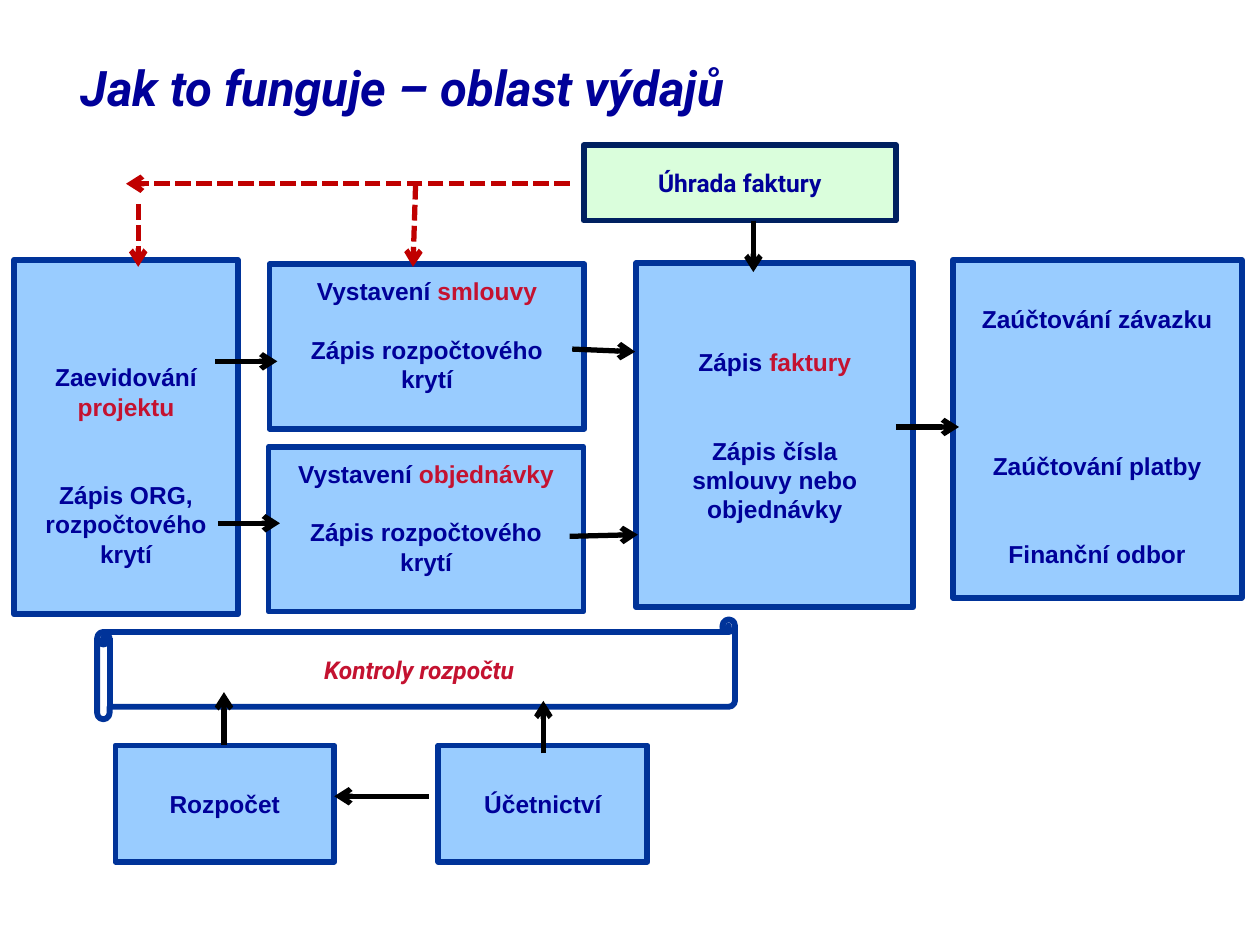
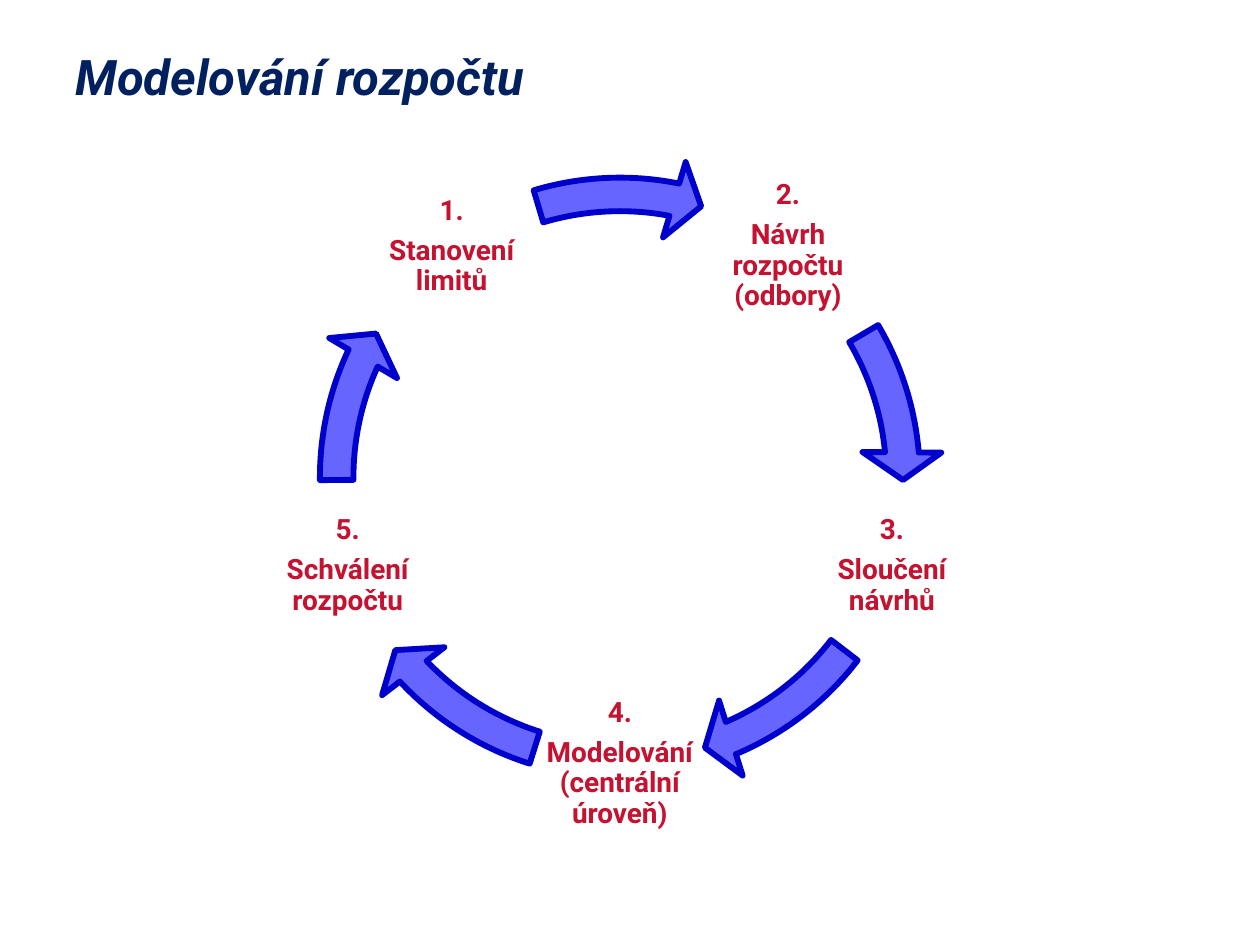
import math

import pptx
import pptx.dml.color
import pptx.enum.dml
import pptx.enum.shapes
import pptx.enum.text
import pptx.util
from lxml import etree

Pt = pptx.util.Pt
SHAPE = pptx.enum.shapes.MSO_SHAPE
ANCHOR = pptx.enum.text.MSO_ANCHOR
ALIGN = pptx.enum.text.PP_ALIGN
A = "{http://schemas.openxmlformats.org/drawingml/2006/main}"

BLUE, NAVY, RED = "000099", "002060", "C41230"
BOX_FILL, BOX_LINE = "99CCFF", "003399"
LINE_PITCH = 16.8


def rgb(value):
    return pptx.dml.color.RGBColor.from_string(value)


def write(tf, text, size=14, font="Arial", color=BLUE, italic=False,
          align=ALIGN.CENTER, anchor=ANCHOR.MIDDLE, inset=None,
          gaps=(), spacing=None, after=None):
    """Fill tf with bold lines; *starred* words are red, gaps are spaces before lines."""
    tf.word_wrap = True
    tf.auto_size = pptx.enum.text.MSO_AUTO_SIZE.NONE
    tf.vertical_anchor = anchor
    if inset is not None:
        tf.margin_left = tf.margin_right = tf.margin_top = tf.margin_bottom = Pt(inset)
    for i, line in enumerate(text.split("\n")):
        p = tf.paragraphs[0] if i == 0 else tf.add_paragraph()
        p.alignment = align
        if i and gaps:
            p.space_before = Pt(gaps[i - 1])
        if spacing:
            p.line_spacing = spacing
        if after:
            p.space_after = Pt(after)
        for j, part in enumerate(line.split("*")):
            if not part:
                continue
            r = p.add_run()
            r.text = part
            r.font.name, r.font.size = font, Pt(size)
            r.font.bold, r.font.italic = True, italic
            r.font.color.rgb = rgb(RED if j % 2 else color)


class Deck:
    def __init__(self):
        self.prs = pptx.Presentation()
        self.prs.slide_width, self.prs.slide_height = Pt(720), Pt(540)
        self.s = None

    def slide(self, title, x, y, w, h, color):
        self.s = self.prs.slides.add_slide(self.prs.slide_layouts[5])
        sp = self.s.shapes.title
        sp.left, sp.top, sp.width, sp.height = Pt(x), Pt(y), Pt(w), Pt(h)
        write(sp.text_frame, title, size=28, font="Roboto", color=color,
              italic=True, align=ALIGN.LEFT)

    def shape(self, kind, x, y, w, h, fill=BOX_FILL, line=BOX_LINE, text="", **fmt):
        sp = self.s.shapes.add_shape(kind, Pt(x), Pt(y), Pt(w), Pt(h))
        sp.shadow.inherit = False
        if fill:
            sp.fill.solid()
            sp.fill.fore_color.rgb = rgb(fill)
        else:
            sp.fill.background()
        sp.line.color.rgb = rgb(line)
        sp.line.width = Pt(3.35)
        if text:
            write(sp.text_frame, text, **fmt)
        return sp

    def text(self, x, y, w, h, text, **fmt):
        sp = self.s.shapes.add_textbox(Pt(x), Pt(y), Pt(w), Pt(h))
        write(sp.text_frame, text, **fmt)

    def card(self, x, y, w, h, drop, text, blank_lines):
        """Box whose text starts drop points below its top."""
        self.shape(SHAPE.RECTANGLE, x, y, w, h)
        self.text(x + 6.5, y + drop, w - 13, h - drop, text, anchor=ANCHOR.TOP,
                  gaps=[n * LINE_PITCH for n in blank_lines])

    def arrow(self, x1, y1, x2, y2, color="000000", dashed=False):
        c = self.s.shapes.add_connector(pptx.enum.shapes.MSO_CONNECTOR.STRAIGHT,
                                        Pt(x1), Pt(y1), Pt(x2), Pt(y2))
        c.line.color.rgb = rgb(color)
        c.line.width = Pt(3)
        if dashed:
            c.line.dash_style = pptx.enum.dml.MSO_LINE.SQUARE_DOT
        etree.SubElement(c.line._get_or_add_ln(), A + "tailEnd", type="arrow")
        etree.SubElement(c._element.spPr, A + "effectLst")

    def ring_arrow(self, x, y, size, start, end):
        """Arrow along a circle, angles in degrees clockwise from the right."""
        sp = self.shape(SHAPE.CIRCULAR_ARROW, x, y, size, size,
                        fill="6666FF", line="0000CC")
        head = 5.6
        unit = 0.6  # adjustment units per degree
        values = (0.052, head * unit, end * unit, start * unit, 0.061)
        for i, value in enumerate(values):
            sp.adjustments[i] = value


def spending_slide(deck):
    deck.slide("Jak to funguje – oblast výdajů", 39, 16.5, 684, 66, BLUE)
    cards = [
        (8, 148.5, 128, 202.5, 55,
         "Zaevidování *projektu*\nZápis ORG, rozpočtového krytí", [2]),
        (154, 151, 180, 94, 3,
         "Vystavení *smlouvy*\nZápis rozpočtového krytí", [1]),
        (153.5, 255.5, 180, 94, 3,
         "Vystavení *objednávky*\nZápis rozpočtového krytí", [1]),
        (363.5, 150.5, 158.5, 196.5, 44.5,
         "Zápis *faktury*\nZápis čísla smlouvy nebo objednávky", [2]),
        (544.5, 148.5, 165, 193, 21.5,
         "Zaúčtování závazku\nZaúčtování platby\nFinanční odbor", [4, 2]),
    ]
    for card in cards:
        deck.card(*card)
    deck.shape(SHAPE.RECTANGLE, 333.5, 83, 178.5, 43, fill="DAFEDC", line=NAVY,
               text="Úhrada faktury", font="Roboto")
    deck.shape(SHAPE.RECTANGLE, 66, 426, 125, 66.5, text="Rozpočet")
    deck.shape(SHAPE.RECTANGLE, 250.5, 426, 119.5, 66.5, text="Účetnictví")
    deck.shape(SHAPE.HORIZONTAL_SCROLL, 55.5, 354, 364.5, 57, fill=None,
               text="*Kontroly rozpočtu*", font="Roboto", italic=True)

    flow = [
        (123, 206.5, 158.5, 206.5), (124.5, 299, 160, 299),
        (327, 199.5, 363, 201), (325.5, 306.5, 364.5, 305.5),
        (512, 244, 548, 244), (430.5, 126, 430.5, 155.5),
        (310.5, 430.5, 310.5, 400.5), (128, 425.5, 128, 395.5),
        (245, 455, 191, 455),
    ]
    feedback = [(325.5, 105, 72, 105), (237.5, 105, 236, 152.5),
                (79, 116.5, 79, 152.5)]
    for ends in flow:
        deck.arrow(*ends)
    for ends in feedback:
        deck.arrow(*ends, color="C00000", dashed=True)


def budget_cycle_slide(deck):
    deck.slide("Modelování rozpočtu", 36, 21.5, 494, 44, NAVY)
    cx, cy, radius = 354.2, 272.9, 163.5
    ring, label = 368.6, 98
    steps = [  # label, start and end angle of the arrow that follows it
        ("Stanovení limitů", 253.3, 281.1),
        ("Návrh rozpočtu (odbory)", 329.44, 354.89),
        ("Sloučení návrhů", 37.55, 66.92),
        ("Modelování (centrální úroveň)", 107.49, 136.85),
        ("Schválení rozpočtu", 179.51, 204.97),
    ]
    for i, (name, start, end) in enumerate(steps):
        angle = math.radians(-126 + i * 360 / len(steps))
        x = cx + radius * math.cos(angle)
        y = cy + radius * math.sin(angle)
        deck.text(x - label / 2, y - label / 2, label, label, f"{i + 1}.\n{name}",
                  size=16, font="Roboto", color=RED, inset=1.5,
                  spacing=0.9, after=5.6)
        deck.ring_arrow(cx - ring / 2, cy - ring / 2, ring, start, end)


def main():
    deck = Deck()
    spending_slide(deck)
    budget_cycle_slide(deck)
    deck.prs.save("out.pptx")


if __name__ == "__main__":
    main()
